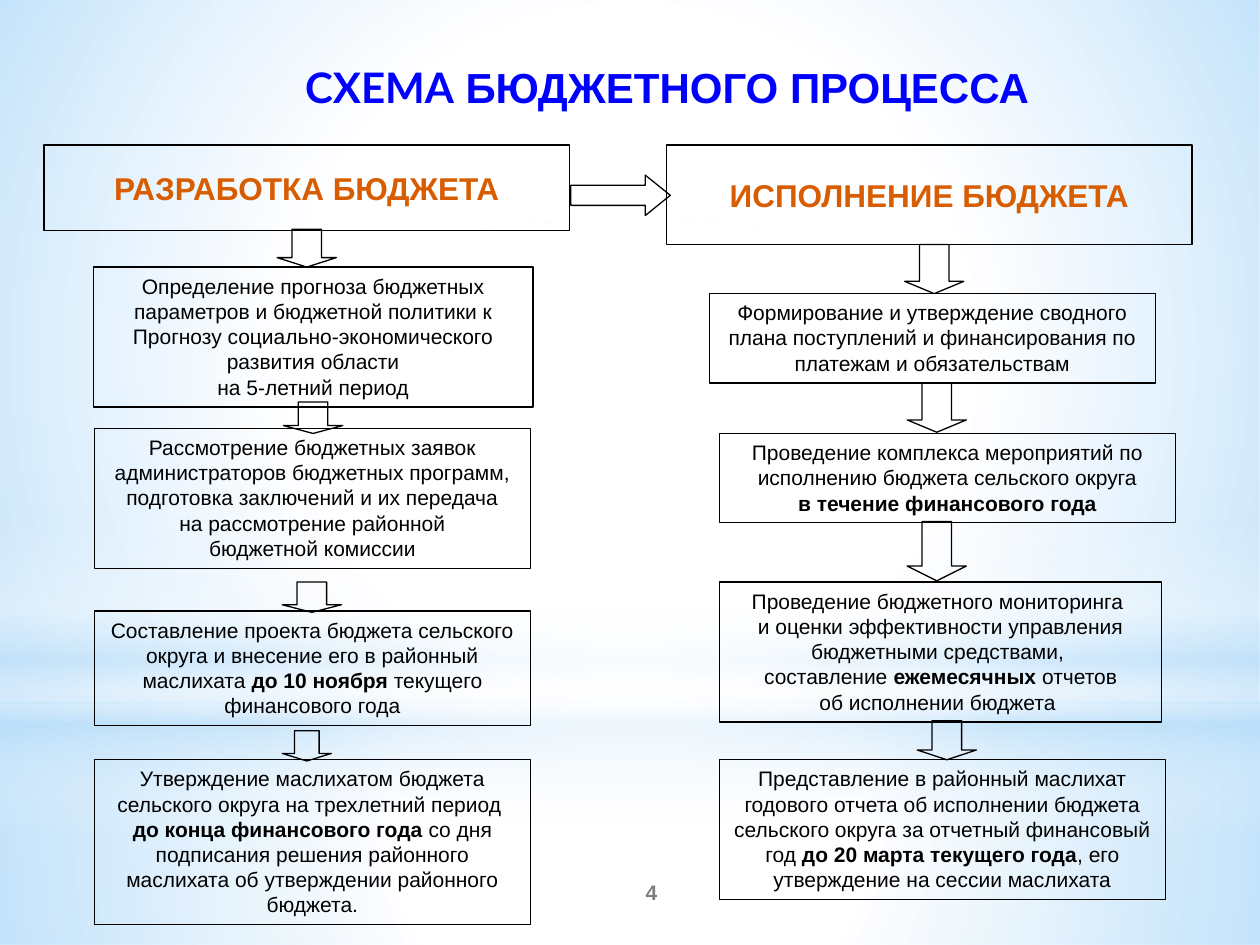
import pptx
import pptx.util
import pptx.oxml
import pptx.oxml.ns
import pptx.dml.color
import pptx.enum.shapes
import pptx.enum.text

RGB = pptx.dml.color.RGBColor
KIND = pptx.enum.shapes.MSO_SHAPE
MID = pptx.enum.text.MSO_ANCHOR.MIDDLE
TOP = pptx.enum.text.MSO_ANCHOR.TOP
BLACK = RGB(0, 0, 0)
BLUE = RGB(0, 0, 255)
RUST = RGB(0xD8, 0x5C, 0x00)
GRAY = RGB(0x7F, 0x7F, 0x7F)
WHITE = RGB(255, 255, 255)
SKY = RGB(0xB4, 0xDC, 0xFA)

deck = pptx.Presentation()
deck.slide_width = pptx.util.Inches(10)
deck.slide_height = pptx.util.Inches(7.5)
COL = deck.slide_width / 100
ROW = deck.slide_height / 75
slide = deck.slides.add_slide(deck.slide_layouts[6])


def draw(kind, left, top, wide, high):
    item = slide.shapes.add_shape(
        kind, round(left * COL), round(top * ROW), round(wide * COL), round(high * ROW))
    item.shadow.inherit = False
    item.fill.background()
    item.line.color.rgb = BLACK
    item.line.width = pptx.util.Pt(0.75)
    return item


def write(item, text, size=12, color=BLACK, bold=False, fonts=("Arial",),
          anchor=TOP, wrap=True, pad=1):
    frame = item.text_frame
    frame.word_wrap = wrap
    frame.vertical_anchor = anchor
    frame.margin_left = frame.margin_right = round(pad * COL)
    frame.margin_top = frame.margin_bottom = round(pad * ROW / 2)
    for row, line in enumerate(text.split("\n")):
        para = frame.paragraphs[0] if row == 0 else frame.add_paragraph()
        para.alignment = pptx.enum.text.PP_ALIGN.CENTER
        for turn, part in enumerate(line.split("*")):
            if part:
                run = para.add_run()
                run.text = part
                run.font.size = pptx.util.Pt(size)
                run.font.name = fonts[turn % len(fonts)]
                run.font.bold = bold or turn % 2 == 1
                run.font.color.rgb = color


ROUND = ('<a:path path="circle"><a:fillToRect l="50000" t="50000" '
         'r="50000" b="50000"/></a:path>')
DOWN = '<a:lin ang="5400000" scaled="0"/>'
glows = [
    (KIND.RECTANGLE, (0, 55.8, 100, 19.2), ROUND,
     [(0, WHITE, 91), (37, WHITE, 76), (100, SKY, 79)]),
    (KIND.RECTANGLE, (0, 0, 100, 55.8), ROUND,
     [(0, WHITE, 89), (48, WHITE, 62), (100, SKY, 79)]),
    (KIND.RECTANGLE, (0, 41.2, 100, 25), DOWN,
     [(0, WHITE, 0), (29, WHITE, 30), (45, SKY, 40),
      (55, WHITE, 26), (65, SKY, 60), (100, WHITE, 0)]),
    (KIND.OVAL, (0, 17.5, 100, 55.8), ROUND, [(0, WHITE, 100), (56, WHITE, 0)]),
]
for kind, area, way, stops in glows:
    glow = draw(kind, *area)
    glow.line.fill.background()
    marks = "".join(
        f'<a:gs pos="{pos * 1000}"><a:srgbClr val="{tone}">'
        f'<a:alpha val="{alpha * 1000}"/></a:srgbClr></a:gs>'
        for pos, tone, alpha in stops)
    fill = pptx.oxml.parse_xml(
        f'<a:gradFill {pptx.oxml.ns.nsdecls("a")} rotWithShape="1">'
        f'<a:gsLst>{marks}</a:gsLst>{way}</a:gradFill>')
    props = glow.element.spPr
    blank = props.find(pptx.oxml.ns.qn("a:noFill"))
    props.replace(blank, fill)

title = slide.shapes.add_textbox(
    round(13.8 * COL), round(4.4 * ROW), round(78.3 * COL), round(5 * ROW))
write(title, "СХЕМА* БЮДЖЕТНОГО ПРОЦЕССА", size=24, color=BLUE, bold=True,
      fonts=("Lato", "Arial"))

heads = [
    (3.5, 6.8, "РАЗРАБОТКА БЮДЖЕТА"),
    (52.9, 7.9, "ИСПОЛНЕНИЕ БЮДЖЕТА"),
]
for left, high, text in heads:
    write(draw(KIND.RECTANGLE, left, 11.5, 41.7, high), text,
          size=18, color=RUST, bold=True, anchor=MID, wrap=False, pad=0)

steps = [
    (7.4, 21.2, 34.9, 11.1,
     "Определение прогноза бюджетных параметров и бюджетной политики к "
     "Прогнозу социально-экономического развития области\nна 5-летний период"),
    (7.5, 34, 34.6, 11.1,
     "Рассмотрение бюджетных заявок администраторов бюджетных программ, "
     "подготовка заключений и их передача\nна рассмотрение районной\n"
     "бюджетной комиссии"),
    (7.5, 48.5, 34.6, 9.1,
     "Составление проекта бюджета сельского округа и внесение его в районный "
     "маслихата *до 10 ноября *текущего финансового года"),
    (7.5, 60.3, 34.6, 13.1,
     "Утверждение маслихатом бюджета сельского округа на трехлетний период \n"
     "*до конца финансового года *со дня подписания решения районного "
     "маслихата об утверждении районного бюджета."),
    (56.3, 23.3, 35.4, 7.1,
     "Формирование и утверждение сводного плана поступлений и финансирования "
     "по платежам и обязательствам"),
    (57.1, 34.4, 36.2, 7.1,
     "Проведение комплекса мероприятий по исполнению бюджета сельского округа\n"
     "*в течение финансового года"),
    (57.1, 46.2, 35.1, 11.1,
     "Проведение бюджетного мониторинга \n"
     "и оценки эффективности управления бюджетными средствами, \n"
     "составление *ежемесячных* отчетов\nоб исполнении бюджета "),
    (57.1, 60.3, 35.4, 11.1,
     "Представление в районный маслихат годового отчета об исполнении бюджета "
     "сельского округа за отчетный финансовый год *до 20 марта текущего года*, "
     "его утверждение на сессии маслихата"),
]
for left, top, wide, high, text in steps:
    write(draw(KIND.RECTANGLE, left, top, wide, high), text)

drops = [
    (22, 18.2, 4.7, 3), (22.5, 31.9, 4.7, 2.5),
    (22.4, 46.2, 4.7, 2.4), (22.4, 58, 3.9, 2.4),
    (71.8, 19.4, 4.7, 3.9), (72, 30.4, 4.7, 3.9),
    (72, 41.4, 4.7, 4.7), (72.8, 57.2, 4.7, 3.1),
]
for area in drops:
    drop = draw(KIND.DOWN_ARROW, *area)
    drop.adjustments[0] = 0.5
    drop.adjustments[1] = 0.25
across = draw(KIND.RIGHT_ARROW, 45.3, 13.9, 7.9, 3.2)
across.adjustments[0] = 0.5
across.adjustments[1] = 0.62

page = slide.shapes.add_textbox(
    round(41.7 * COL), round(68.3 * ROW), round(20 * COL), round(5 * ROW))
write(page, "4", color=GRAY, bold=True, anchor=MID)

deck.save("out.pptx")
